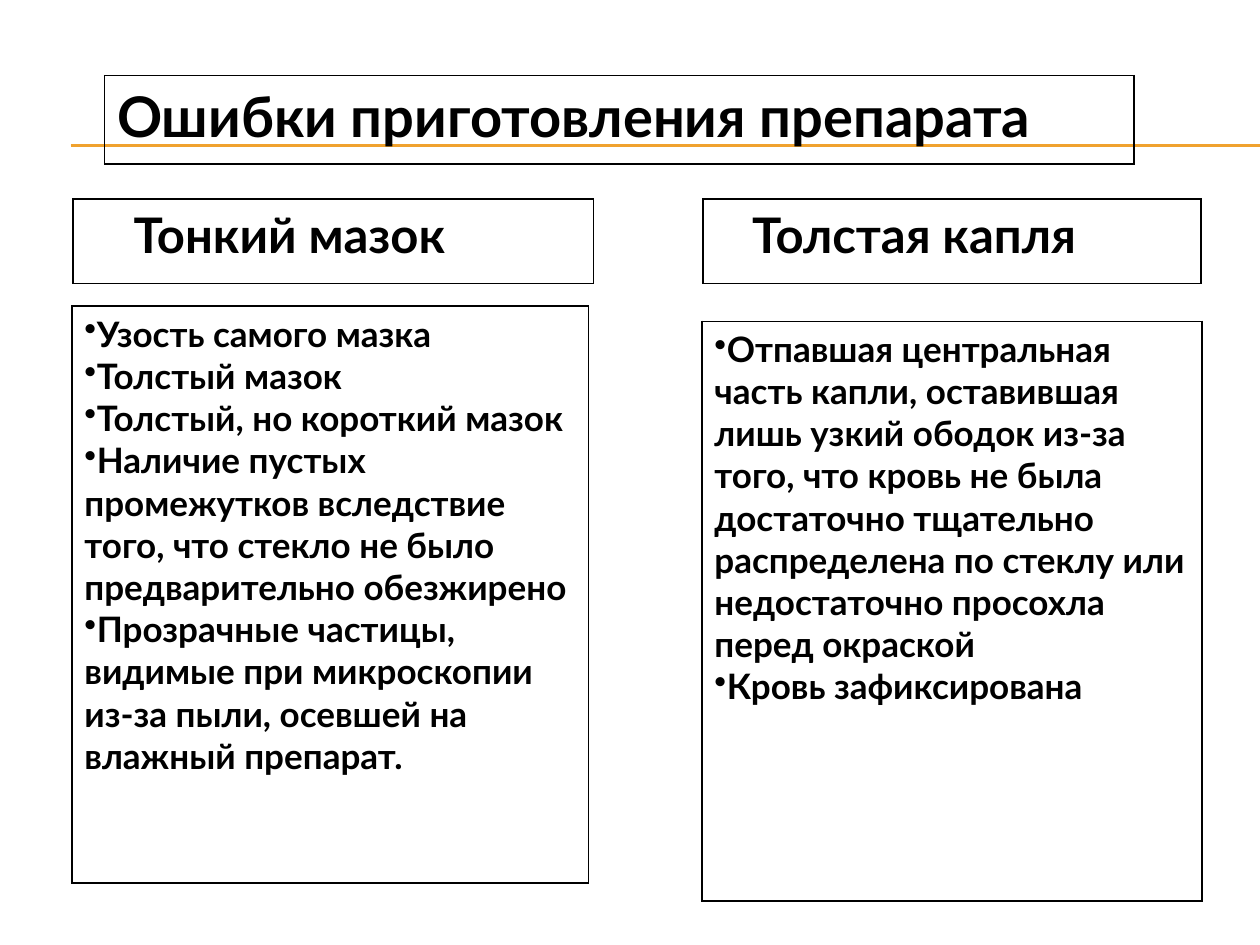
from dataclasses import dataclass

from lxml import etree
from pptx import Presentation
from pptx.dml.color import RGBColor
from pptx.enum import shapes
from pptx.oxml import parse_xml
from pptx.oxml.ns import nsdecls, qn
from pptx.util import Inches, Pt


@dataclass(frozen=True)
class Theme:
    font: str = "Lato"
    ink: str = "000000"
    accent: str = "F0A22E"
    title: int = 32
    heading: int = 28
    body: int = 20
    border: float = 1
    rule: float = 0.75


class SlideBuilder:
    def __init__(self, s, theme):
        self.s = s
        self.theme = theme

    def rule(self, left, right, y):
        c = self.s.shapes.add_connector(
            shapes.MSO_CONNECTOR.STRAIGHT,
            Inches(left), Inches(y), Inches(right), Inches(y))
        c.line.color.rgb = RGBColor.from_string(self.theme.accent)
        c.line.width = Pt(self.theme.rule)
        etree.SubElement(c._element.spPr, qn("a:effectLst"))

    def box(self, at, lines, size, indent=0, bullets=False):
        frame = self.s.shapes.add_table(1, 1, *map(Inches, at))
        table = frame.table
        table.first_row = table.horz_banding = False
        cell = table.cell(0, 0)
        cell.margin_left = Inches(0.1 + indent)
        cell.fill.background()
        self.borders(cell)
        tf = cell.text_frame
        tf.text = "\n".join(lines)
        for p in tf.paragraphs:
            if bullets:
                self.bullet(p)
            for r in p.runs:
                r.font.name = self.theme.font
                r.font.size = Pt(size)
                r.font.bold = True
                r.font.color.rgb = RGBColor.from_string(self.theme.ink)

    def borders(self, cell):
        tcPr = cell._tc.get_or_add_tcPr()
        for i, side in enumerate("LRTB"):
            tcPr.insert(i, parse_xml(
                f'<a:ln{side} {nsdecls("a")} w="{Pt(self.theme.border)}">'
                f'<a:solidFill><a:srgbClr val="{self.theme.ink}"/></a:solidFill>'
                f'</a:ln{side}>'))

    def bullet(self, p):
        pPr = p._p.get_or_add_pPr()
        etree.SubElement(pPr, qn("a:buChar")).set("char", "•")


def main():
    prs = Presentation()
    prs.slide_width, prs.slide_height = Inches(10), Inches(7.5)
    theme = Theme()
    b = SlideBuilder(prs.slides.add_slide(prs.slide_layouts[6]), theme)

    for y in (1.15, 1.16):
        b.rule(0.56, 10, y)

    b.box((0.83, 0.6, 8.17, 0.7), ["Ошибки приготовления препарата"], theme.title)
    b.box((0.58, 1.58, 4.13, 0.67), ["Тонкий мазок"], theme.heading, indent=0.38)
    b.box((5.58, 1.58, 3.95, 0.67), ["Толстая капля"], theme.heading, indent=0.29)

    thin_smear = [
        "Узость самого мазка",
        "Толстый мазок",
        "Толстый, но короткий мазок",
        "Наличие пустых промежутков вследствие того, что стекло не было "
        "предварительно обезжирено",
        "Прозрачные частицы, видимые при микроскопии из-за пыли, осевшей "
        "на влажный препарат.",
    ]
    thick_drop = [
        "Отпавшая центральная часть капли, оставившая лишь узкий ободок "
        "из-за того, что кровь не была достаточно тщательно распределена "
        "по стеклу или недостаточно просохла перед окраской",
        "Кровь зафиксирована",
    ]
    b.box((0.57, 2.43, 4.1, 4.58), thin_smear, theme.body, bullets=True)
    b.box((5.57, 2.55, 3.97, 4.6), thick_drop, theme.body, bullets=True)

    prs.save("out.pptx")


if __name__ == "__main__":
    main()
